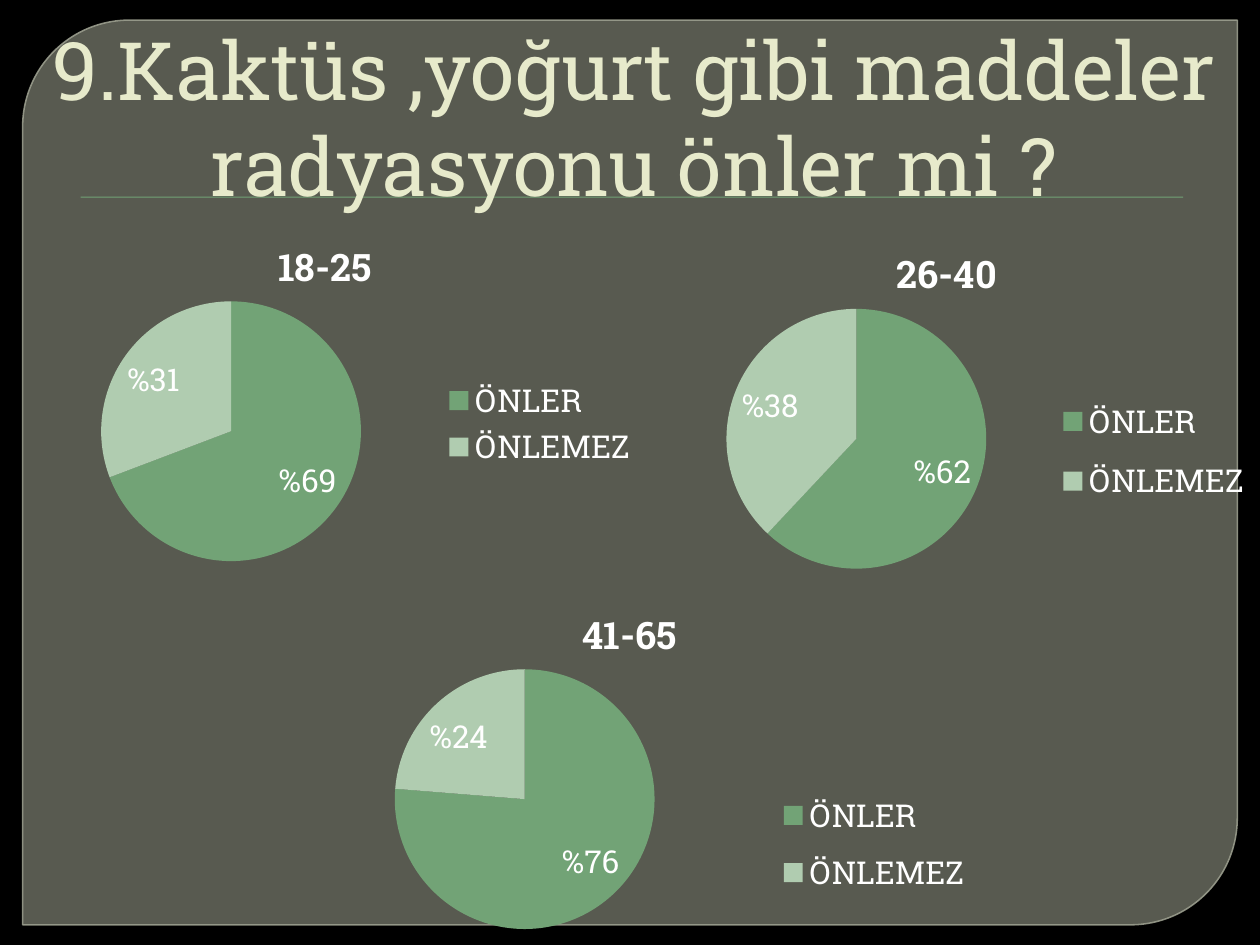
import pptx
import pptx.chart.data
import pptx.dml.color
import pptx.enum.chart
import pptx.enum.shapes
import pptx.enum.text
import pptx.oxml
import pptx.oxml.ns
import pptx.util
from pptx.util import Inches

FONT = "Roboto Slab"
CATEGORIES = ["ÖNLER", "ÖNLEMEZ"]
SLICE_COLORS = ["72A376", "B0CCB0"]
PLOT_AREA = (0.025, 0.235, 0.661, 0.721)
AGE_CHARTS = [
    ("18-25", (27, 12), ("%69", "%31"), (0, 1.72, 5.16, 2.86), (0.67, 0.44, 0.32, 0.27)),
    ("26-40", (31, 19), ("%62", "%38"), (5.03, 1.78, 4.97, 2.86), (0.67, 0.44, 0.32, 0.38)),
    ("41-65", (45, 14), ("%76", "%24"), (2.11, 4.64, 5.78, 2.86), (0.68, 0.54, 0.31, 0.36)),
]


def set_color(color_format, color):
    """Give a colour format an RGB value from a hex string."""
    color_format.rgb = pptx.dml.color.RGBColor.from_string(color)


def set_fill(fill, color):
    """Make a fill solid in the given colour."""
    fill.solid()
    set_color(fill.fore_color, color)


def set_font(font, size, color, bold=False):
    """Style a font."""
    font.name = FONT
    font.size = pptx.util.Pt(size)
    font.bold = bold
    set_color(font.color, color)


def set_opacity(fill, percent):
    """Make a solid fill partly transparent."""
    color = fill._xPr.find(".//" + pptx.oxml.ns.qn("a:srgbClr"))
    alpha = pptx.oxml.parse_xml(
        f'<a:alpha {pptx.oxml.ns.nsdecls("a")} val="{percent * 1000}"/>')
    color.append(alpha)


def add_shape(slide, kind, box, color):
    """Add a filled preset shape without line or shadow."""
    shape = slide.shapes.add_shape(kind, *map(Inches, box))
    shape.shadow.inherit = False
    set_fill(shape.fill, color)
    shape.line.fill.background()
    return shape


def add_panel(slide):
    """Add the translucent panel with two rounded corners."""
    kind = pptx.enum.shapes.MSO_SHAPE.ROUND_2_DIAG_RECTANGLE
    panel = add_shape(slide, kind, (0.18, 0.16, 9.64, 7.18), "888B7B")
    panel.adjustments[0] = 0.118
    panel.adjustments[1] = 0
    set_opacity(panel.fill, 65)
    set_fill(panel.line.fill, "9DA090")
    set_opacity(panel.line.fill, 88)
    panel.line.width = pptx.util.Pt(0.87)


def add_rule(slide):
    """Add the thin rule under the title with its soft shadow."""
    kind = pptx.enum.shapes.MSO_SHAPE.RECTANGLE
    rule = add_shape(slide, kind, (0.64, 1.56, 8.75, 0.01), "72A376")
    effects = rule._element.spPr.find(pptx.oxml.ns.qn("a:effectLst"))
    effects.append(pptx.oxml.parse_xml(
        f'<a:outerShdw {pptx.oxml.ns.nsdecls("a")} blurRad="12700" dist="12700" '
        'dir="5400000"><a:srgbClr val="000000"><a:alpha val="75000"/>'
        '</a:srgbClr></a:outerShdw>'))


def add_title(slide, text):
    """Add the bottom-anchored slide title."""
    frame = slide.shapes.add_textbox(0, 0, Inches(10), Inches(1.72)).text_frame
    frame.word_wrap = True
    frame.vertical_anchor = pptx.enum.text.MSO_ANCHOR.BOTTOM
    frame.margin_left = Inches(0.16)
    frame.margin_top = 0
    frame.margin_bottom = Inches(0.03)
    paragraph = frame.paragraphs[0]
    paragraph.alignment = pptx.enum.text.PP_ALIGN.CENTER
    run = paragraph.add_run()
    run.text = text
    set_font(run.font, 46, "E7EACB")


def make_layout(box, inner=False):
    """Return a manual chart layout given in fractions of the chart."""
    target = '<c:layoutTarget val="inner"/>' if inner else ""
    modes = "".join(f'<c:{name}Mode val="edge"/>' for name in "xy")
    sizes = "".join(f'<c:{name} val="{value}"/>' for name, value in zip("xywh", box))
    return pptx.oxml.parse_xml(
        f'<c:layout {pptx.oxml.ns.nsdecls("c")}><c:manualLayout>'
        f'{target}{modes}{sizes}</c:manualLayout></c:layout>')


def remove_layout(element):
    """Remove the automatic layout of a chart part."""
    for layout in element.findall(pptx.oxml.ns.qn("c:layout")):
        element.remove(layout)


def place_plot(chart, box):
    """Fix the inner plot area of a chart."""
    plot_area = chart._chartSpace.chart.plotArea
    remove_layout(plot_area)
    plot_area.insert(0, make_layout(box, inner=True))


def place_legend(chart, box):
    """Show the legend at a fixed place on the right."""
    chart.has_legend = True
    legend = chart.legend
    legend.position = pptx.enum.chart.XL_LEGEND_POSITION.RIGHT
    legend.include_in_layout = False
    set_font(legend.font, 18, "FFFFFF")
    element = legend._element
    remove_layout(element)
    element.find(pptx.oxml.ns.qn("c:legendPos")).addnext(make_layout(box))


def style_slices(series, labels):
    """Colour the slices and give each its own label."""
    best_fit = pptx.enum.chart.XL_LABEL_POSITION.BEST_FIT
    data_labels = series.data_labels
    data_labels.show_value = True
    data_labels.show_percentage = False
    data_labels.position = best_fit
    set_font(data_labels.font, 18, "FFFFFF")
    for index, (color, text) in enumerate(zip(SLICE_COLORS, labels)):
        point = series.points[index]
        set_fill(point.format.fill, color)
        run = point.data_label.text_frame.paragraphs[0].add_run()
        run.text = text
        set_font(run.font, 18, "FFFFFF")
        point.data_label.position = best_fit


def add_pie(slide, age, values, labels, box, legend_box):
    """Add the pie chart of one age group."""
    data = pptx.chart.data.CategoryChartData()
    data.categories = CATEGORIES
    data.add_series(age, values)
    kind = pptx.enum.chart.XL_CHART_TYPE.PIE
    chart = slide.shapes.add_chart(kind, *map(Inches, box), data).chart
    set_font(chart.font, 18, "FFFFFF")
    chart.has_title = True
    run = chart.chart_title.text_frame.paragraphs[0].add_run()
    run.text = age
    set_font(run.font, 21.6, "FFFFFF", bold=True)
    chart.plots[0].vary_by_categories = True
    style_slices(chart.plots[0].series[0], labels)
    place_plot(chart, PLOT_AREA)
    place_legend(chart, legend_box)


def main():
    """Build the slide and save it."""
    presentation = pptx.Presentation()
    presentation.slide_width = Inches(10)
    presentation.slide_height = Inches(7.5)
    slide = presentation.slides.add_slide(presentation.slide_layouts[6])
    set_fill(slide.background.fill, "000000")
    add_panel(slide)
    add_rule(slide)
    add_title(slide, "9.Kaktüs ,yoğurt gibi maddeler radyasyonu önler mi ?")
    for age_chart in AGE_CHARTS:
        add_pie(slide, *age_chart)
    presentation.save("out.pptx")


if __name__ == "__main__":
    main()
